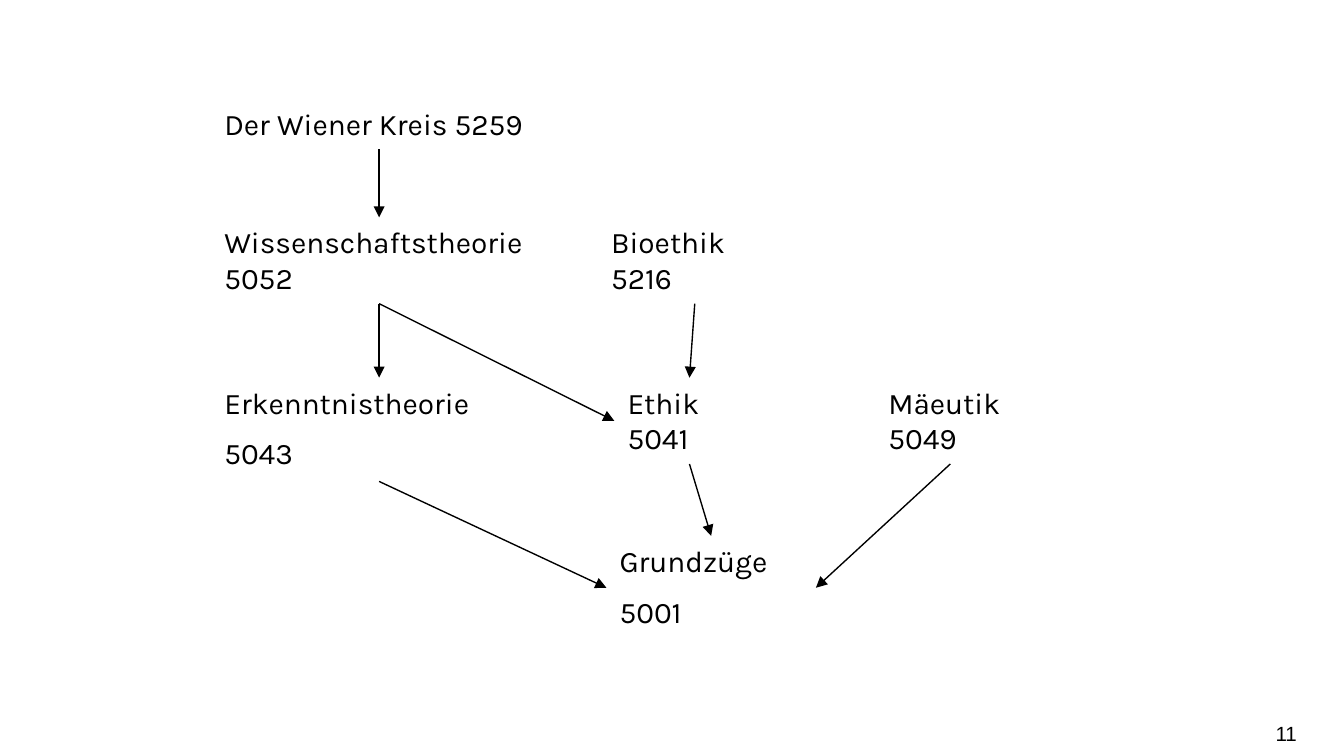
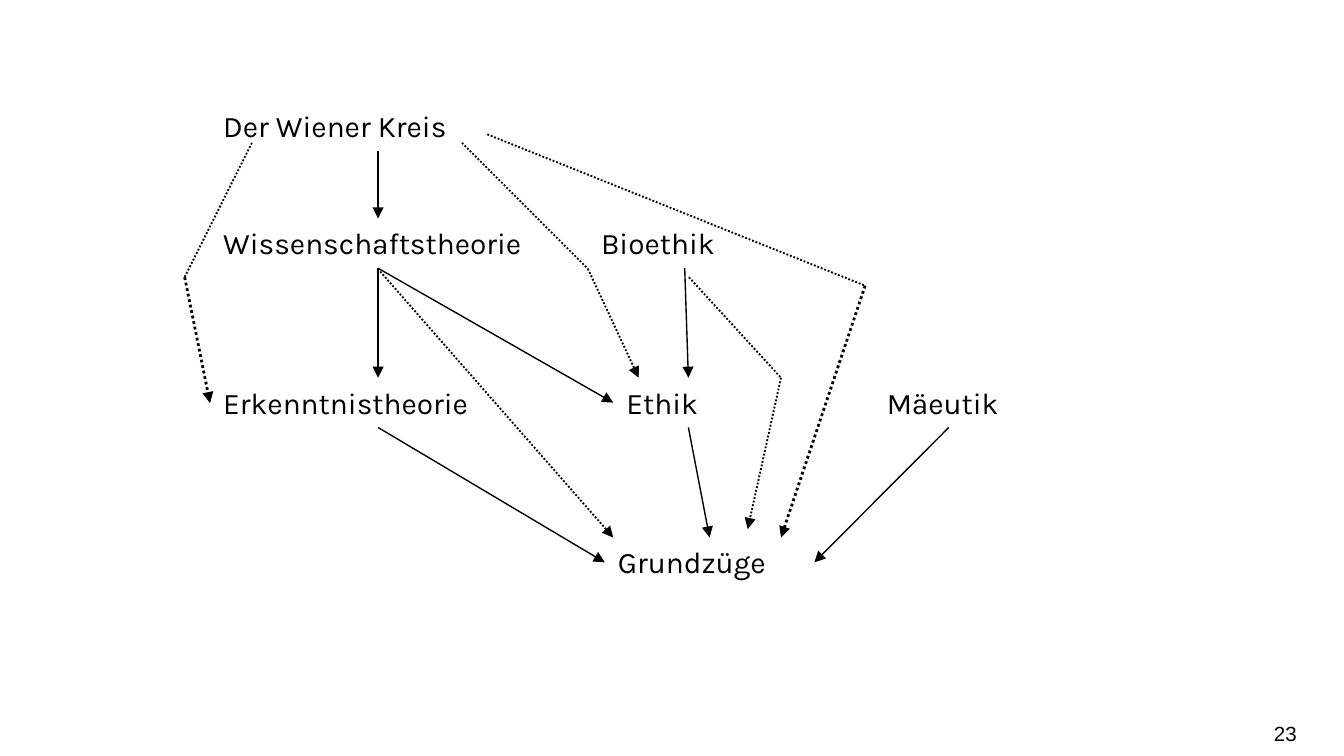
from lxml import etree
from pptx import Presentation
from pptx.dml.color import RGBColor
from pptx.enum.dml import MSO_LINE
from pptx.enum.shapes import MSO_CONNECTOR
from pptx.enum.text import MSO_ANCHOR, MSO_AUTO_SIZE, PP_ALIGN
from pptx.oxml.ns import qn
from pptx.util import Cm, Pt

BLACK = RGBColor(0x00, 0x00, 0x00)
WHITE = RGBColor(0xFF, 0xFF, 0xFF)
STRAIGHT = MSO_CONNECTOR.STRAIGHT
DOTTED = MSO_LINE.ROUND_DOT
GROW = MSO_AUTO_SIZE.SHAPE_TO_FIT_TEXT
MIDDLE = MSO_ANCHOR.MIDDLE
RIGHT_ALIGNED = PP_ALIGN.RIGHT

COURSE_FONT = {"name": "Karla", "size": Pt(16)}
NUMBER_FONT = {"name": "Arial", "size": Pt(11)}

# Connection sites of a text box
TOP, LEFT, BOTTOM, RIGHT = range(4)

# Box widths in centimetres
WIDTHS = {"Kreis": 6.35, "Wissen": 6.35, "Bioethik": 3.66, "Erkenntnis": 6.35,
          "Ethik": 2.84, "Mäeutik": 2.84, "Grundzüge": 3.96}

# Every arrow leaves the bottom of a course and ends at a side of the next one
PREREQUISITES = [
    ("Kreis", "Wissen", TOP),
    ("Wissen", "Erkenntnis", TOP),
    ("Wissen", "Ethik", LEFT),
    ("Bioethik", "Ethik", TOP),
    ("Erkenntnis", "Grundzüge", LEFT),
    ("Ethik", "Grundzüge", TOP),
    ("Mäeutik", "Grundzüge", RIGHT),
]

# Courses: key -> left, top, height, paragraphs
NUMBERED_COURSES = {
    "Kreis": (3.99, 1.88, 0.94, ["Der Wiener Kreis 5259"]),
    "Wissen": (3.99, 4.11, 1.63, ["Wissenschaftstheorie 5052"]),
    "Bioethik": (11.3, 4.11, 1.63, ["Bioethik 5216"]),
    "Erkenntnis": (3.99, 7.14, 1.96, ["Erkenntnistheorie", "5043"]),
    "Ethik": (11.61, 7.14, 1.63, ["Ethik 5041"]),
    "Mäeutik": (16.54, 7.14, 1.63, ["Mäeutik 5049"]),
    "Grundzüge": (11.46, 10.13, 1.96, ["Grundzüge", "5001"]),
}
PLAIN_COURSES = {
    "Kreis": (3.97, 1.91, 0.94, ["Der Wiener Kreis"]),
    "Wissen": (3.97, 4.13, 0.94, ["Wissenschaftstheorie"]),
    "Bioethik": (11.11, 4.13, 0.94, ["Bioethik"]),
    "Erkenntnis": (3.97, 7.14, 0.94, ["Erkenntnistheorie"]),
    "Ethik": (11.59, 7.14, 0.94, ["Ethik"]),
    "Mäeutik": (16.51, 7.14, 0.94, ["Mäeutik"]),
    "Grundzüge": (11.43, 10.16, 0.94, ["Grundzüge"]),
}

# Dotted routes: points and the width of the last leg
DOTTED_ROUTES = [
    ([(4.76, 2.7), (3.49, 5.24), (3.97, 7.62)], 1.5),
    ([(8.73, 2.7), (11.11, 5.08), (12.07, 7.14)], 1),
    ([(7.14, 5.08), (11.59, 10.16)], 1),
    ([(13.02, 5.24), (14.76, 7.14), (14.13, 10)], 1),
    ([(9.21, 2.54), (16.35, 5.4), (14.76, 10.16)], 1.5),
]


def set_all(target, values):
    for name, value in values.items():
        setattr(target, name, value)


class Deck:
    """Holds the shared style and the current slide."""

    def __init__(self):
        self.presentation = Presentation()
        set_all(self.presentation, {"slide_width": Cm(25.4), "slide_height": Cm(14.29)})
        self.slide = None

    def new_slide(self, number):
        self.slide = self.presentation.slides.add_slide(self.presentation.slide_layouts[6])
        fill = self.slide.background.fill
        fill.solid()
        fill.fore_color.rgb = WHITE
        frame_format = {"vertical_anchor": MIDDLE, "margin_left": 0, "margin_right": 0}
        self.text((18.82, 13.49, 5.69, 0.76), [number], NUMBER_FONT, frame_format,
                  {"alignment": RIGHT_ALIGNED})

    def text(self, place, lines, font, frame_format, paragraph_format):
        shape = self.slide.shapes.add_textbox(*map(Cm, place))
        frame = shape.text_frame
        set_all(frame, {"word_wrap": True, **frame_format})
        for index, line in enumerate(lines):
            paragraph = frame.add_paragraph() if index else frame.paragraphs[0]
            set_all(paragraph, paragraph_format)
            if index:
                paragraph.space_before = Pt(8)
            run = paragraph.add_run()
            run.text = line
            set_all(run.font, font)
            run.font.color.rgb = BLACK
        return shape

    def line(self, start=(0, 0), end=(0, 0), width=0.75, dash=None, arrow=True):
        connector = self.slide.shapes.add_connector(STRAIGHT, *map(Cm, (*start, *end)))
        connector.line.color.rgb = BLACK
        set_all(connector.line, {"width": Pt(width), "dash_style": dash})
        if arrow:
            outline = connector.line._get_or_add_ln()
            etree.SubElement(outline, qn("a:tailEnd"), type="triangle")
        etree.SubElement(connector._element.spPr, qn("a:effectLst"))
        return connector

    def route(self, points, last_width):
        legs = list(zip(points, points[1:]))
        for index, (start, end) in enumerate(legs, 1):
            last = index == len(legs)
            self.line(start, end, last_width if last else 1, DOTTED, last)

    def course_map(self, courses):
        boxes = {}
        for key, (left, top, height, lines) in courses.items():
            place = (left, top, WIDTHS[key], height)
            boxes[key] = self.text(place, lines, COURSE_FONT, {"auto_size": GROW}, {})
        for source, target, side in PREREQUISITES:
            connector = self.line()
            connector.begin_connect(boxes[source], BOTTOM)
            connector.end_connect(boxes[target], side)


def main():
    deck = Deck()

    # Courses with their numbers
    deck.new_slide("11")
    deck.course_map(NUMBERED_COURSES)

    # Courses with additional dotted routes
    deck.new_slide("23")
    deck.course_map(PLAIN_COURSES)
    for points, last_width in DOTTED_ROUTES:
        deck.route(points, last_width)

    deck.presentation.save("out.pptx")


if __name__ == "__main__":
    main()
